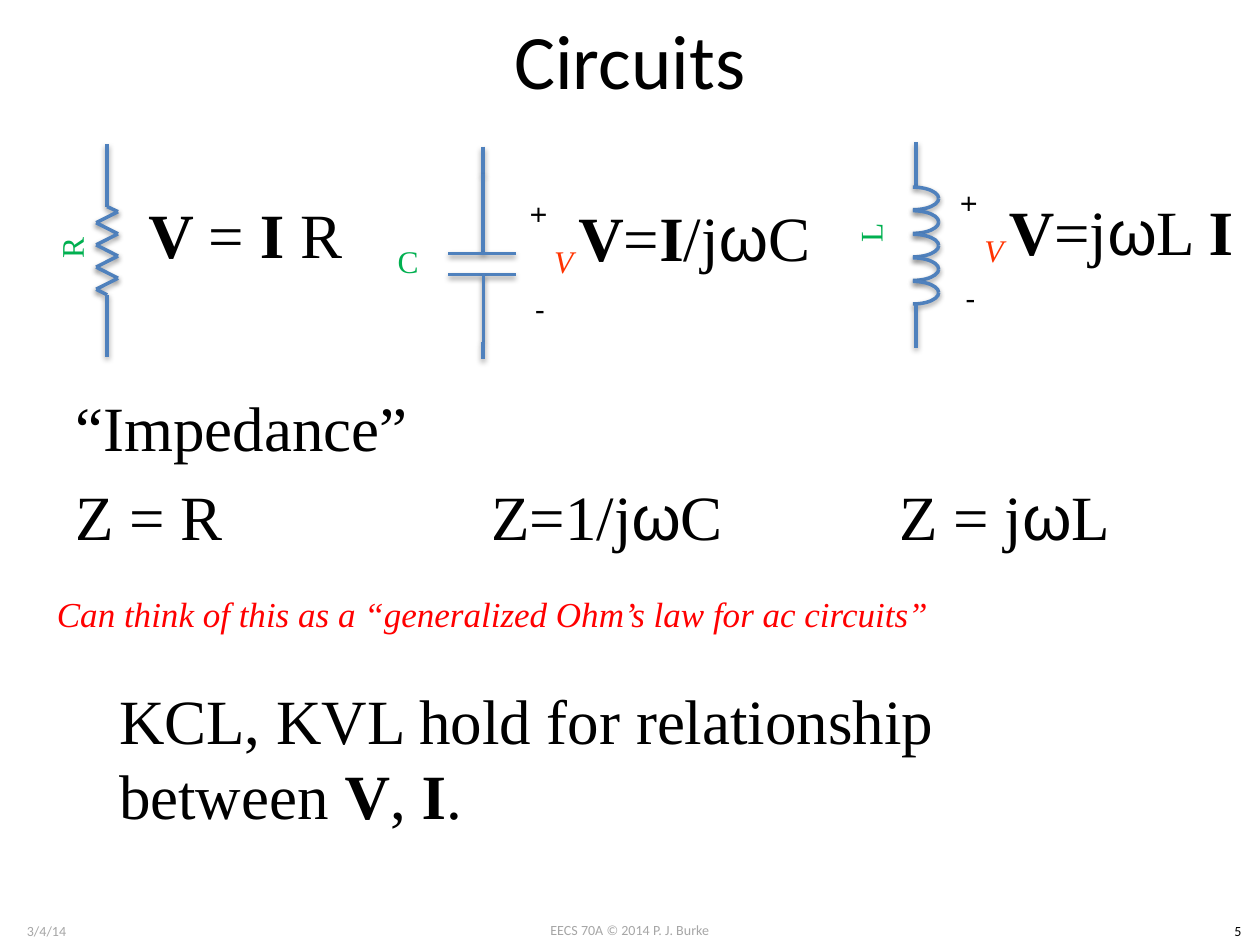
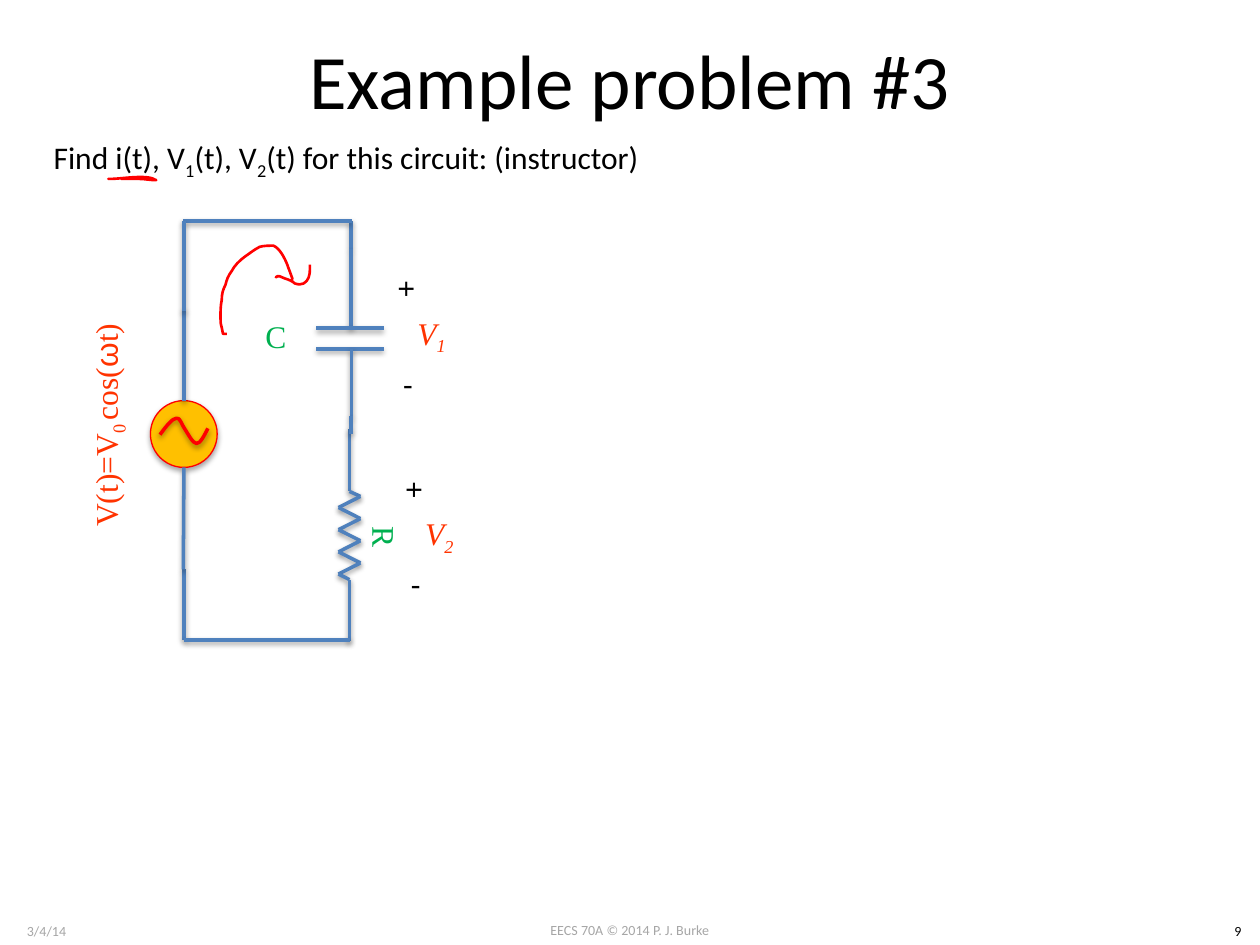
from itertools import pairwise
from typing import NamedTuple

from lxml import etree
from pptx import Presentation
from pptx import util as u
from pptx.dml.color import RGBColor
from pptx.enum import shapes, text
from pptx.oxml.ns import qn

# Every length below is counted in grid cells: 100 columns by 75 rows.
COLUMNS, ROWS = 100, 75
CELL = u.Inches(0.1)

BLACK, GREY, RED, ORANGE_RED = "000000", "A6A6A6", "FF0000", "FF3300"
GREEN, WIRE, AMBER = "00B050", "4F81BD", "FFC000"
SANS, SERIF, GREEK = "Calibri", "Times New Roman", "Arial"


class Box(NamedTuple):
    left: float
    top: float
    width: float
    height: float


class Run(NamedTuple):
    text: str
    bold: bool = False
    sub: bool = False
    font: str | None = None


class Point(NamedTuple):
    x: float
    y: float


class Equation(NamedTuple):
    runs: list[Run]
    box: Box


OMEGA = Run("ω", font=GREEK)


def cells(count: float) -> u.Emu:
    return u.Emu(round(count * CELL))


def colour(hex_code: str) -> RGBColor:
    return RGBColor.from_string(hex_code)


def write(slide, content: str | list[Run], box: Box, *, size=18, font=SANS, ink=BLACK,
          italic=False, centred=False, middle=False, wrap=True, rotation=0) -> None:
    label = slide.shapes.add_textbox(*map(cells, box))
    label.rotation = rotation
    frame = label.text_frame
    frame.word_wrap = wrap
    frame.vertical_anchor = text.MSO_ANCHOR.MIDDLE if middle else text.MSO_ANCHOR.TOP
    if not middle:
        frame.auto_size = text.MSO_AUTO_SIZE.SHAPE_TO_FIT_TEXT
    paragraph = frame.paragraphs[0]
    paragraph.alignment = text.PP_ALIGN.CENTER if centred else text.PP_ALIGN.LEFT
    for part in [Run(content)] if isinstance(content, str) else content:
        run = paragraph.add_run()
        run.text = part.text
        run.font.size = u.Pt(size)
        run.font.name = part.font or font
        run.font.bold, run.font.italic = part.bold, italic
        run.font.color.rgb = colour(ink)
        if part.sub:
            run._r.get_or_add_rPr().set("baseline", "-25000")


def symbol(slide, content: str | list[Run], box: Box, ink: str, **style) -> None:
    """Write a centred circuit symbol in the serif face."""
    write(slide, content, box, font=SERIF, ink=ink, centred=True, middle=True, **style)


def stroke(shape, ink: str, width: float) -> None:
    shape.line.color.rgb = colour(ink)
    shape.line.width = u.Pt(width)


def cast_shadow(shape, opacity=38) -> None:
    properties = shape._element.spPr
    for old in properties.findall(qn("a:effectLst")):
        properties.remove(old)
    effects = etree.SubElement(properties, qn("a:effectLst"))
    shadow = etree.SubElement(effects, qn("a:outerShdw"), blurRad=str(u.Pt(3.1)),
                              dist=str(u.Pt(1.6)), dir="5400000", rotWithShape="0")
    black = etree.SubElement(shadow, qn("a:srgbClr"), val=BLACK)
    etree.SubElement(black, qn("a:alpha"), val=str(opacity * 1000))


def wire(slide, *route: tuple[float, float]) -> None:
    """Join the points of a route with straight lines."""
    for start, end in pairwise(route):
        line = slide.shapes.add_connector(shapes.MSO_CONNECTOR.STRAIGHT,
                                          *map(cells, (*start, *end)))
        stroke(line, WIRE, 2)
        cast_shadow(line)


def bend(drawn) -> None:
    """Turn every three straight segments into one cubic curve."""
    for outline in drawn._element.iter(qn("a:path")):
        segments = outline.findall(qn("a:lnTo"))
        for first in range(0, len(segments), 3):
            cubic = etree.Element(qn("a:cubicBezTo"))
            segments[first].addprevious(cubic)
            for segment in segments[first:first + 3]:
                cubic.append(segment[0])
                outline.remove(segment)


def curve(slide, *strokes: list[tuple[float, float]], width=1.5):
    """Draw strokes, each a start followed by three points per cubic curve."""
    first, *rest = [[(cells(x), cells(y)) for x, y in points] for points in strokes]
    builder = slide.shapes.build_freeform(*first[0])
    builder.add_line_segments(first[1:], close=False)
    for points in rest:
        builder.move_to(*points[0])
        builder.add_line_segments(points[1:], close=False)
    drawn = builder.convert_to_shape()
    bend(drawn)
    drawn.shadow.inherit = False
    drawn.fill.background()
    stroke(drawn, RED, width)
    return drawn


def polarity(slide, at: Point, subscript="") -> None:
    """Mark a voltage V between a plus and a minus sign."""
    write(slide, "+", Box(at.x, at.y, 3.3, 4), wrap=False, rotation=90)
    write(slide, "-", Box(at.x + 0.2, at.y + 7.4, 2.8, 4), wrap=False)
    name = [Run("V")] + ([Run(subscript, sub=True)] if subscript else [])
    symbol(slide, name, Box(at.x - 0.4, at.y + 2.5, 7.7, 6.1), ORANGE_RED, italic=True)


def resistor(slide, top: Point, label: Box, rotation: int) -> None:
    x, y = top
    corners = [(x + (-0.87 if i % 2 else 0.87), y + 5.35 + 0.88 * i) for i in range(8)]
    wire(slide, top, (x, y + 4.95), *corners, (x, y + 11.95), (x, y + 16.85))
    symbol(slide, "R", label, GREEN, rotation=rotation)


def capacitor(slide, top: Point, subscript="") -> None:
    x, y = top
    wire(slide, top, (x, y + 2.2), (x, y + 8.5))
    for plate in (y + 8.5, y + 10.15):
        wire(slide, (x + 2.6, plate), (x - 2.75, plate))
    wire(slide, (x + 0.05, y + 10.15), (x + 0.05, y + 15.5))
    wire(slide, (x, y + 15.5), (x, y + 16.9))
    symbol(slide, "C", Box(x - 11.9, y + 5.45, 11.9, 7.3), GREEN)
    polarity(slide, Point(x + 2.95, y + 3.5), subscript)


def inductor(slide, top: Point) -> None:
    x, y = top
    wire(slide, top, (x, y + 3.5))
    for turn in range(5):
        for start, end in ((270, 0), (0, 90)):
            box = Box(x - 2.3, y + 3.55 + 1.87 * turn, 4.1, 1.8)
            arc = slide.shapes.add_shape(shapes.MSO_SHAPE.ARC, *map(cells, box))
            arc.adjustments[0], arc.adjustments[1] = start * 0.6, end * 0.6
            arc.fill.background()
            stroke(arc, WIRE, 2)
            cast_shadow(arc)
    wire(slide, (x, y + 12.8), (x, y + 16.3))
    symbol(slide, "L", Box(x - 9.6, y + 3.5, 11.9, 7.3), GREEN, rotation=270)
    polarity(slide, Point(x + 2.75, y + 2.95))


def ac_source(slide, box: Box) -> None:
    circle = slide.shapes.add_shape(shapes.MSO_SHAPE.OVAL, *map(cells, box))
    circle.fill.solid()
    circle.fill.fore_color.rgb = colour(AMBER)
    stroke(circle, RED, 0.75)
    cast_shadow(circle, 35)
    sine = [(12.7, 34.5), (13.2, 33.8), (13.7, 33.2), (14, 33.2), (14.3, 33.1),
            (14.4, 33.7), (14.7, 34.1), (14.9, 34.4), (15.3, 35.2), (15.6, 35.2),
            (15.9, 35.2), (16.2, 34.6), (16.5, 34)]
    cast_shadow(curve(slide, sine, width=2))


def start_slide(deck, title: str, title_height: float, number: int):
    slide = deck.slides.add_slide(deck.slide_layouts[6])
    for note, box, ink in (("EECS 70A © 2014 P. J. Burke", Box(38.35, 72.65, 23.3, 2.4), GREY),
                           ("3/4/14", Box(0, 72.7, 7.4, 2.4), GREY),
                           (str(number), Box(96.5, 72.7, 3.5, 2.4), BLACK)):
        write(slide, note, box, size=8, ink=ink, centred=True)
    write(slide, title, Box(5, 0, 90, title_height), size=44, centred=True, middle=True)
    return slide


def build_circuits(deck) -> None:
    slide = start_slide(deck, "Circuits", 9.3, 5)
    inductor(slide, Point(72.7, 11.3))
    capacitor(slide, Point(38.34, 11.63))
    resistor(slide, Point(8.5, 11.45), Box(-0.3, 16, 11.9, 7.3), 270)
    v, i = Run("V", bold=True), Run("I", bold=True)
    equations = [
        Equation([Run("V ", bold=True), Run("= "), Run("I ", bold=True), Run("R")],
                 Box(10.8, 15, 19.5, 7.1)),
        Equation([v, Run("="), i, Run("/j"), OMEGA, Run("C")], Box(44.93, 15.25, 20.4, 7.1)),
        Equation([v, Run("=j"), OMEGA, Run("L "), i], Box(79.1, 14.8, 20.4, 7.1)),
        Equation([Run("“Impedance”")], Box(5, 30.34, 30.5, 7.1)),
        Equation([Run("Z = R")], Box(5, 37.4, 18.9, 7.1)),
        Equation([Run("Z=1/j"), OMEGA, Run("C")], Box(38, 37.4, 21.2, 7.1)),
        Equation([Run("Z = j"), OMEGA, Run("L")], Box(70.4, 37.4, 21.2, 7.1)),
        Equation([Run("KCL, KVL hold for relationship between "), v, Run(", "), i, Run(".")],
                 Box(8.46, 53.57, 77.8, 13.1)),
    ]
    for equation in equations:
        write(slide, equation.runs, equation.box, size=36, font=SERIF)
    write(slide, "Can think of this as a “generalized Ohm’s law for ac circuits”",
          Box(3.53, 46.5, 90, 4.4), size=20, font=SERIF, ink=RED, italic=True)


def build_example(deck) -> None:
    slide = start_slide(deck, "Example problem #3", 12.5, 9)
    write(slide, [Run("Find i(t), V"), Run("1", sub=True), Run("(t), V"), Run("2", sub=True),
                  Run("(t) for this circuit: (instructor)")], Box(3.27, 10.5, 61.6, 4))
    resistor(slide, Point(27.74, 34.05), Box(24.6, 39, 11.9, 7.3), 90)
    wire(slide, (14.6, 45.2), (14.6, 50.8), (27.8, 50.8))
    capacitor(slide, Point(27.85, 17.54), "1")
    symbol(slide, [Run("V(t)=V"), Run("0 ", sub=True), Run("cos("), OMEGA, Run("t)")],
           Box(-2, 30.7, 21.1, 6.1), ORANGE_RED, rotation=270)
    polarity(slide, Point(31.42, 36.94), "2")
    ac_source(slide, Box(11.94, 31.8, 5.3, 5.3))
    wire(slide, (14.55, 45.2), (14.6, 37.1))
    wire(slide, (14.6, 31.8), (14.6, 24.5))
    wire(slide, (27.9, 17.54), (14.5, 17.54))
    wire(slide, (14.6, 24.7), (14.6, 17.54))

    underline = [(8.9, 14.2), (8.8, 14.2), (8.3, 14.2), (8.8, 14.2), (9.7, 14.2), (11.7, 13.8),
                 (12.4, 14.3), (11.9, 14.3), (11.5, 14.2), (11, 14.2), (10.7, 14.1),
                 (10.2, 14.2), (9.9, 14.2), (9.2, 14.2), (10, 14.2), (10.2, 14.2),
                 (10.7, 14.2), (11.3, 14.2), (11.8, 14.2)]
    current_loop = [(18, 26.5), (17.9, 26.5), (17.8, 26.5), (17.7, 26.5), (17.7, 26.3),
                    (17.6, 26.2), (17.6, 26), (17.5, 25.7), (17.5, 25.5), (17.5, 25.2),
                    (17.5, 24.7), (17.5, 24.3), (17.6, 23.8), (17.6, 23.3), (17.7, 23),
                    (17.9, 22.6), (18, 22.2), (18.1, 21.9), (18.4, 21.5), (18.6, 21.1),
                    (19, 20.7), (19.4, 20.4), (19.7, 20.2), (20.2, 19.8), (20.6, 19.6),
                    (20.9, 19.5), (21.4, 19.5), (21.7, 19.5), (22.2, 19.7), (22.6, 20.5),
                    (22.8, 21), (22.9, 21.3), (23.1, 21.8), (23.2, 22.1), (23.2, 22.2),
                    (23.1, 22.3), (23.2, 22.4)]
    loop_head = [(22, 22), (22, 22), (21.9, 22), (21.9, 22), (22.1, 21.8), (22.3, 22),
                 (22.6, 22.1), (22.9, 22.2), (23.2, 22.3), (23.4, 22.5), (23.7, 22.6),
                 (23.9, 22.6), (24.1, 22.5), (24.5, 22.3), (24.6, 21.8), (24.6, 21.4),
                 (24.6, 21.3), (24.6, 21.1), (24.6, 21)]
    curve(slide, underline)
    curve(slide, current_loop, loop_head)


def main() -> None:
    deck = Presentation()
    deck.slide_width, deck.slide_height = cells(COLUMNS), cells(ROWS)
    build_circuits(deck)
    build_example(deck)
    deck.save("out.pptx")


if __name__ == "__main__":
    main()
